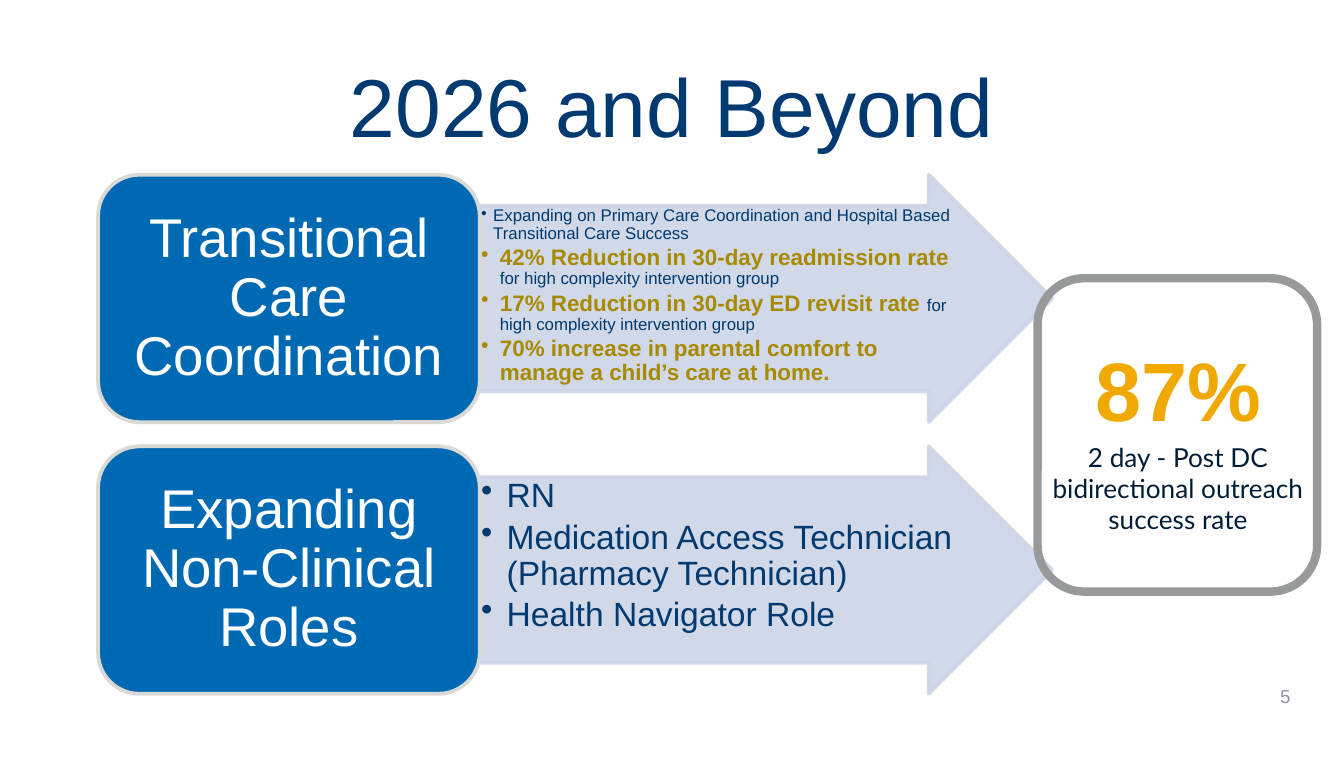
from lxml.etree import SubElement
from pptx import Presentation
from pptx.dml.color import RGBColor
from pptx.enum.shapes import MSO_SHAPE as SHAPE
from pptx.enum.text import MSO_ANCHOR as ANCHOR, PP_ALIGN as ALIGN
from pptx.oxml.ns import qn
from pptx.util import Inches, Pt

COLORS = {"navy": "003A70", "blue": "0069B3", "pale": "CCD4E5", "edge": "D9D9D6",
          "olive": "A78A00", "gold": "F0A900", "ink": "001D38", "gray": "97999B",
          "number": "8C91A4", "white": "FFFFFF"}

# A run is (text, size, colour, bold); a paragraph is a list of runs.
TITLE = "2026 and Beyond"
SMALL, STRONG = (9, "navy", False), (12, "olive", True)
ROLE = (18, "navy", False)
ROWS = [
    ("Transitional Care Coordination", [
        (0.09, [("Expanding on Primary Care Coordination and Hospital Based "
                 "Transitional Care Success", *SMALL)]),
        (0.14, [("42% Reduction in 30-day readmission rate ", *STRONG),
                ("for high complexity intervention group", *SMALL)]),
        (0.14, [("17% Reduction in 30-day ED revisit rate ", *STRONG),
                ("for high complexity intervention group", *SMALL)]),
        (0.14, [("70% increase in parental comfort to manage a child’s care at home.",
                 *STRONG)]),
    ]),
    ("Expanding Non-Clinical Roles", [
        (0.19, [("RN", *ROLE)]),
        (0.19, [("Medication Access Technician (Pharmacy Technician)", *ROLE)]),
        (0.19, [("Health Navigator Role", *ROLE)]),
    ]),
]
RATE = ("87%", 44.4, "gold", True)
RATE_NOTE = ("2 day - Post DC bidirectional outreach success rate", 14, "ink", False)
PAGE = ("5", 10, "number", False)

WIDTH, HEIGHT = 10, 5.63
ROW_TOP, ROW_HEIGHT, ROW_PITCH = 1.3, 1.84, 2.02
LABEL_LEFT, LABEL_WIDTH, ARROW_WIDTH = 0.73, 2.84, 4.26
RATE_LEFT, RATE_TOP, RATE_WIDTH, RATE_HEIGHT = 7.65, 2.41, 2.23, 0.82


def rgb(name):
    return RGBColor.from_string(COLORS[name])


def write(shape, paragraphs, *, align=ALIGN.LEFT, anchor=ANCHOR.TOP, font="Arial",
          insets=(0.1, 0.05, 0.1, 0.05), spacing=None, hangs=()):
    """Fill a shape with paragraphs; each hang makes its paragraph a bullet."""
    frame = shape.text_frame
    frame.word_wrap = True
    frame.vertical_anchor = anchor
    (frame.margin_left, frame.margin_top,
     frame.margin_right, frame.margin_bottom) = map(Inches, insets)
    for i, runs in enumerate(paragraphs):
        para = frame.paragraphs[0] if i == 0 else frame.add_paragraph()
        para.alignment = align
        if spacing:
            para.line_spacing = spacing
        if hangs:
            para.level = 1
            para.space_after = Pt(0.15 * runs[0][1])
            props = para._p.get_or_add_pPr()
            props.set("marL", str(Inches(hangs[i])))
            props.set("indent", str(-Inches(hangs[i])))
            SubElement(props, qn("a:buChar"), char="•")
        for text, size, color, bold in runs:
            run = para.add_run()
            run.text = text
            run.font.name, run.font.size, run.font.bold = font, Pt(size), bold
            run.font.color.rgb = rgb(color)


def add_block(slide, kind, box, line, weight, fill=None, alpha=None):
    shape = slide.shapes.add_shape(kind, *map(Inches, box))
    shape.shadow.inherit = False
    shape.line.color.rgb, shape.line.width = rgb(line), Pt(weight)
    if fill:
        shape.fill.solid()
        shape.fill.fore_color.rgb = rgb(fill)
    else:
        shape.fill.background()
    if alpha:
        for color in shape._element.spPr.iter(qn("a:srgbClr")):
            SubElement(color, qn("a:alpha"), val=str(alpha * 1000))
    return shape


def add_text(slide, box, run, **style):
    write(slide.shapes.add_textbox(*map(Inches, box)), [[run]], **style)


def add_row(slide, index, label, bullets):
    top = ROW_TOP + index * ROW_PITCH
    arrow = add_block(slide, SHAPE.RIGHT_ARROW,
                      (LABEL_LEFT + LABEL_WIDTH, top, ARROW_WIDTH, ROW_HEIGHT),
                      "pale", 2, fill="pale", alpha=90)
    arrow.adjustments[0], arrow.adjustments[1] = 0.75, 0.5
    write(arrow, [runs for _, runs in bullets], spacing=0.9,
          insets=(0.01, 0.01, 0.02, 0.01), hangs=[hang for hang, _ in bullets])
    card = add_block(slide, SHAPE.ROUNDED_RECTANGLE,
                     (LABEL_LEFT, top, LABEL_WIDTH, ROW_HEIGHT), "edge", 2, fill="blue")
    write(card, [[(label, 29.2, "white", False)]], align=ALIGN.CENTER,
          anchor=ANCHOR.MIDDLE, insets=(0.12, 0.06, 0.12, 0.06), spacing=0.9)


def main():
    deck = Presentation()
    deck.slide_width, deck.slide_height = Inches(WIDTH), Inches(HEIGHT)
    slide = deck.slides.add_slide(deck.slide_layouts[5])

    title = slide.shapes.title
    title.left, title.top, title.width, title.height = map(Inches, (0.69, 0.3, 8.62, 1.09))
    large_insets = (0.1, 0.11, 0.1, 0.05)
    write(title, [[(TITLE, 44, "navy", False)]], align=ALIGN.CENTER, insets=large_insets)
    add_text(slide, (7.37, 5.03, 2.33, 0.3), PAGE, align=ALIGN.RIGHT, anchor=ANCHOR.MIDDLE)

    for index, (label, bullets) in enumerate(ROWS):
        add_row(slide, index, label, bullets)

    add_text(slide, (RATE_LEFT, RATE_TOP, RATE_WIDTH, RATE_HEIGHT), RATE,
             align=ALIGN.CENTER, insets=large_insets)
    add_text(slide, (RATE_LEFT, RATE_TOP + RATE_HEIGHT, RATE_WIDTH, RATE_HEIGHT),
             RATE_NOTE, align=ALIGN.CENTER, font="Lato")
    add_block(slide, SHAPE.ROUNDED_RECTANGLE, (7.72, 2.07, 2.08, 2.33), "gray", 4.5)
    deck.save("out.pptx")


if __name__ == "__main__":
    main()
